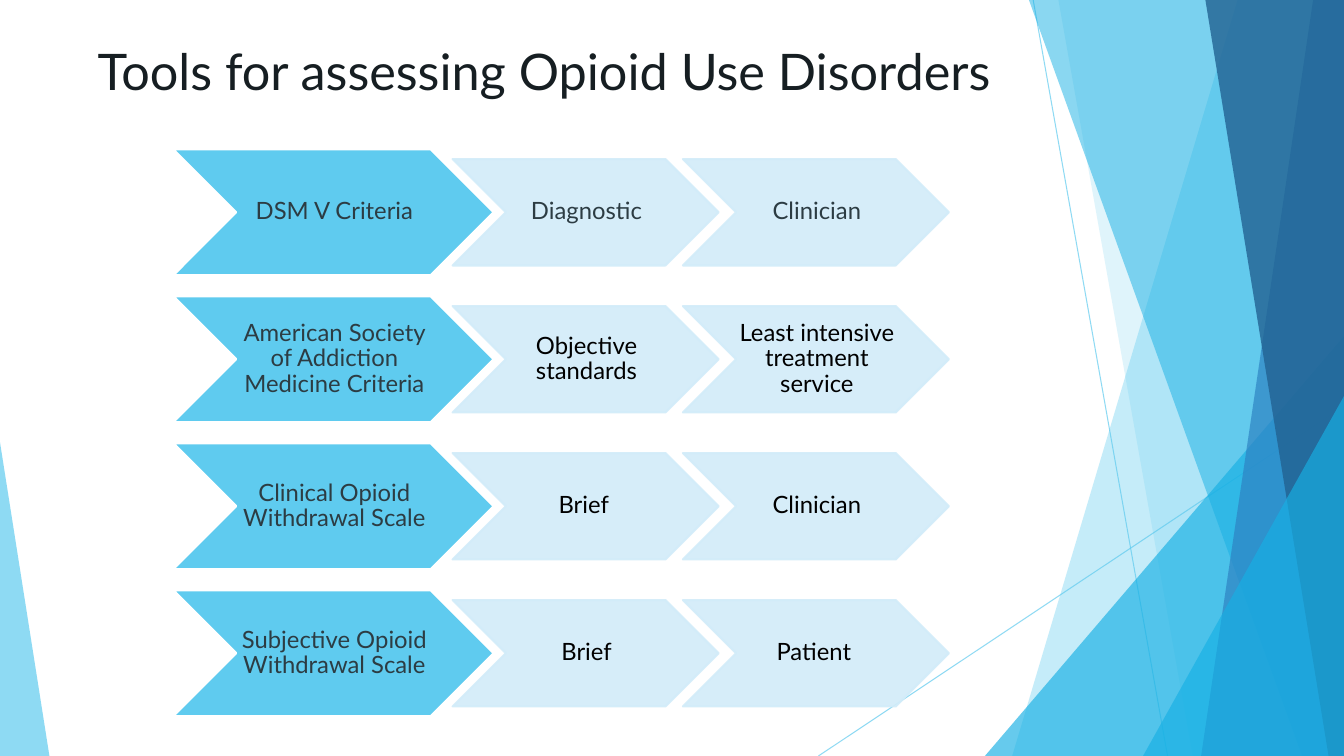
import dataclasses

import pptx
import pptx.dml.color
import pptx.enum.shapes
import pptx.enum.text
import pptx.oxml
import pptx.oxml.ns
import pptx.util
from lxml import etree

Pt = pptx.util.Pt
SHAPES = pptx.enum.shapes.MSO_SHAPE


@dataclasses.dataclass(frozen=True)
class Theme:
    """Colours, font and type sizes of the slide."""
    font: str = "Lato"
    title_size: int = 36
    label_size: int = 17
    title: str = "161E22"
    slate: str = "2C3C43"
    black: str = "000000"
    white: str = "FFFFFF"
    sky: str = "5FCBEF"
    pale: str = "D2ECF9"
    cyan: str = "17B0E4"
    blue: str = "2E83C3"
    navy: str = "226292"


@dataclasses.dataclass(frozen=True)
class Box:
    """A rectangle measured in points."""
    left: float
    top: float
    width: float
    height: float

    def lengths(self):
        """Return the four sides as slide lengths."""
        return [Pt(side) for side in dataclasses.astuple(self)]


THEME = Theme()
SLIDE = Box(0, 0, 960, 540)
TITLE = Box(62.6, 25.2, 676.8, 65.5)
TOOLS_GRID = Box(123.8, 106.6, 554, 405)

TOOLS = [
    ("DSM V Criteria", "Diagnostic", "Clinician", THEME.slate),
    ("American Society of Addiction Medicine Criteria", "Objective standards",
     "Least intensive treatment service", THEME.black),
    ("Clinical Opioid Withdrawal Scale", "Brief ", "Clinician", THEME.black),
    ("Subjective Opioid Withdrawal Scale", "Brief", "Patient ", THEME.black),
]


def rgb(colour):
    """Turn a hex string into a colour."""
    return pptx.dml.color.RGBColor.from_string(colour)


def set_opacity(shape, percent):
    """Give every colour of the shape the same opacity."""
    for colour in shape._element.spPr.iter(pptx.oxml.ns.qn("a:srgbClr")):
        alpha = etree.SubElement(colour, pptx.oxml.ns.qn("a:alpha"))
        alpha.set("val", str(percent * 1000))


def paint(shape, fill, opacity=100, line=None):
    """Fill the shape and outline it where a line colour is given."""
    shape.shadow.inherit = False
    shape.fill.solid()
    shape.fill.fore_color.rgb = rgb(fill)
    if line:
        shape.line.color.rgb = rgb(line)
        shape.line.width = Pt(1.5)
    else:
        shape.line.fill.background()
    if opacity < 100:
        set_opacity(shape, opacity)


def add_hairline(slide, start, end):
    """Draw a thin translucent line between two points."""
    line = slide.shapes.add_connector(
        pptx.enum.shapes.MSO_CONNECTOR.STRAIGHT, *map(Pt, start + end))
    line.line.color.rgb = rgb(THEME.sky)
    line.line.width = Pt(0.75)
    set_opacity(line, 70)
    etree.SubElement(line._element.spPr, pptx.oxml.ns.qn("a:effectLst"))


def add_shard(slide, box, top_left, bottom_left, fill, opacity):
    """Draw a full-height shard that reaches the right edge of the box."""
    right, bottom = box.left + box.width, box.top + box.height
    builder = slide.shapes.build_freeform(
        box.left + top_left, box.top, scale=float(Pt(1)))
    builder.add_line_segments(
        [(right, box.top), (right, bottom), (box.left + bottom_left, bottom)])
    paint(builder.convert_to_shape(), fill, opacity)


def add_corner(slide, box, left, width, height, peak, fill, opacity):
    """Draw a right-angled triangle standing on the bottom of the box."""
    place = Box(box.left + left, box.top + box.height - height, width, height)
    corner = slide.shapes.add_shape(SHAPES.ISOSCELES_TRIANGLE, *place.lengths())
    corner.adjustments[0] = peak
    paint(corner, fill, opacity)


def add_backdrop(slide, box):
    """Layer the translucent shards along the sides of the box."""
    right, bottom = box.left + box.width, box.top + box.height
    add_hairline(slide, (box.left + 738, box.top), (box.left + 834, bottom))
    add_hairline(slide, (right, box.top + 290), (box.left + 584.6, bottom))
    add_shard(slide, box, 884, 723, THEME.sky, 36)
    add_shard(slide, box, 756, 852, THEME.sky, 20)
    add_corner(slide, box, 703.5, 256.5, 300, 1, THEME.cyan, 66)
    add_shard(slide, box, 735.2, 929.5, THEME.cyan, 50)
    add_shard(slide, box, 938, 858.2, THEME.blue, 70)
    add_shard(slide, box, 861, 949, THEME.navy, 80)
    add_corner(slide, box, 816.5, 143.5, 257, 1, THEME.cyan, 66)
    add_corner(slide, box, 0, 35.3, 224, 0, THEME.sky, 70)


def set_title(slide, box, text):
    """Place and format the title placeholder in the box."""
    title = slide.shapes.title
    title.left, title.top, title.width, title.height = box.lengths()
    frame = title.text_frame
    frame.text = text
    frame.word_wrap = True
    frame.auto_size = pptx.enum.text.MSO_AUTO_SIZE.NONE
    frame.vertical_anchor = pptx.enum.text.MSO_ANCHOR.TOP
    paragraph = frame.paragraphs[0]
    paragraph.alignment = pptx.enum.text.PP_ALIGN.LEFT
    paragraph.font.name = THEME.font
    paragraph.font.size = Pt(THEME.title_size)
    paragraph.font.color.rgb = rgb(THEME.title)


def add_chevron(slide, box, text, colour, fill, line, opacity):
    """Draw a labelled chevron that fills the box."""
    chevron = slide.shapes.add_shape(SHAPES.CHEVRON, *box.lengths())
    paint(chevron, fill, opacity, line)
    frame = chevron.text_frame
    frame.word_wrap = True
    frame.vertical_anchor = pptx.enum.text.MSO_ANCHOR.MIDDLE
    frame.margin_left, frame.margin_right = Pt(1.4), 0
    frame.margin_top = frame.margin_bottom = Pt(0.7)
    frame.text = text
    paragraph = frame.paragraphs[0]
    paragraph.alignment = pptx.enum.text.PP_ALIGN.CENTER
    paragraph.line_spacing = 0.9
    paragraph.font.name = THEME.font
    paragraph.font.size = Pt(THEME.label_size)
    paragraph.font.color.rgb = rgb(colour)


def add_tools(slide, box, tools):
    """Draw one row of chevrons per tool, evenly spread over the box."""
    name_width, name_height = 228.8, 90
    detail_width, detail_height = 190, 76
    detail_start = 199.5
    detail_step = box.width - detail_width - detail_start
    row_step = (box.height - name_height) / (len(tools) - 1)
    for row, (name, *details, colour) in enumerate(tools):
        top = box.top + row * row_step
        add_chevron(slide, Box(box.left, top, name_width, name_height),
                    name, THEME.slate, THEME.sky, THEME.white, 100)
        for column, detail in enumerate(details):
            place = Box(box.left + detail_start + column * detail_step,
                        top + (name_height - detail_height) / 2,
                        detail_width, detail_height)
            add_chevron(slide, place, detail, colour, THEME.pale, THEME.pale, 90)


def main():
    """Build the slide and save it."""
    presentation = pptx.Presentation()
    presentation.slide_width = Pt(SLIDE.width)
    presentation.slide_height = Pt(SLIDE.height)
    slide = presentation.slides.add_slide(presentation.slide_layouts[5])
    add_backdrop(slide, SLIDE)
    set_title(slide, TITLE, "Tools for assessing Opioid Use Disorders")
    add_tools(slide, TOOLS_GRID, TOOLS)
    presentation.save("out.pptx")


if __name__ == "__main__":
    main()
